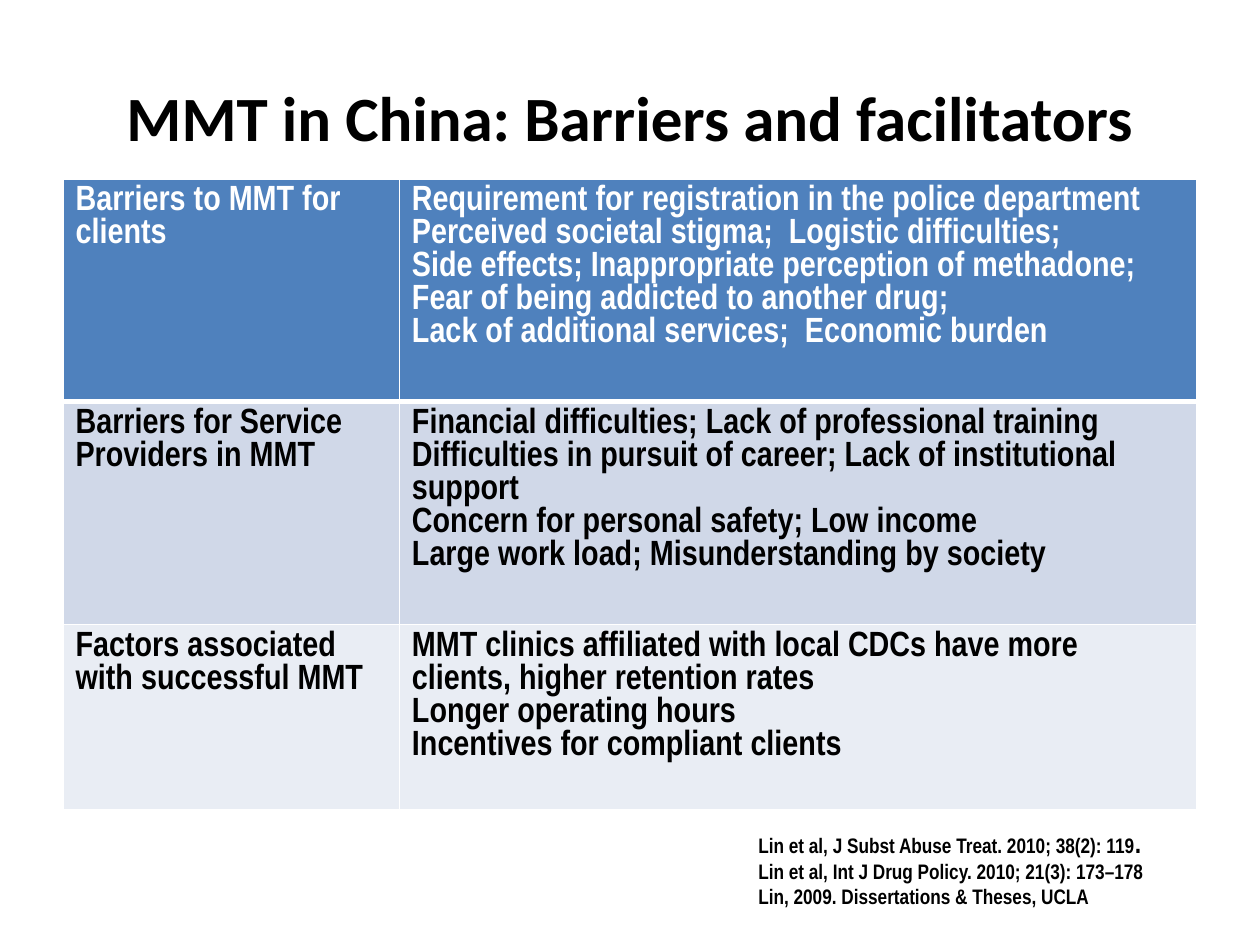
import pptx
import pptx.util
import pptx.dml.color
import pptx.enum.text
import pptx.oxml
import pptx.oxml.ns

Inches, Pt = pptx.util.Inches, pptx.util.Pt
ANCHOR, ALIGN = pptx.enum.text.MSO_ANCHOR, pptx.enum.text.PP_ALIGN

COLORS = {
    "text": "000000",
    "white": "FFFFFF",
    "header": "4F81BD",
    "band_dark": "D0D8E8",
    "band_light": "E9EDF4",
}

COLUMN_WIDTHS = [2.67, 6.33]
# Each row: height, fill, text colour, label, details
ROWS = [
    (1.72, "header", "white", "Barriers to MMT for clients", [
        "Requirement for registration in the police department",
        "Perceived societal stigma;  Logistic difficulties;",
        "Side effects; Inappropriate perception of methadone;",
        "Fear of being addicted to another drug;",
        "Lack of additional services;  Economic burden",
    ]),
    (1.72, "band_dark", "text", "Barriers for Service Providers in MMT", [
        "Financial difficulties; Lack of professional training",
        "Difficulties in pursuit of career; Lack of institutional support",
        "Concern for personal safety; Low income",
        "Large work load; Misunderstanding by society",
    ]),
    (1.47, "band_light", "text", "Factors associated with successful MMT", [
        "MMT clinics affiliated with local CDCs have more clients, higher retention rates",
        "Longer operating hours",
        "Incentives for compliant clients",
    ]),
]
REFERENCES = [
    [("Lin et al, J Subst Abuse Treat. 2010; 38(2): 119", 12), (".", 16)],
    "Lin et al, Int J Drug Policy. 2010; 21(3): 173–178",
    "Lin, 2009. Dissertations & Theses, UCLA",
]


def write(tf, lines, size, font="Arial Narrow", color="text", align=ALIGN.LEFT):
    """Write one paragraph per line; a line is a string or a list of (text, size) runs."""
    tf.word_wrap = True
    for i, line in enumerate(lines):
        p = tf.paragraphs[0] if i == 0 else tf.add_paragraph()
        p.alignment = align
        for text, run_size in [(line, size)] if isinstance(line, str) else line:
            r = p.add_run()
            r.text = text
            r.font.name = font
            r.font.size = Pt(run_size)
            r.font.bold = True
            r.font.color.rgb = pptx.dml.color.RGBColor.from_string(COLORS[color])


def set_borders(cell, widths):
    """Draw white cell borders; widths maps each side (L, R, T, B) to points."""
    tc_pr = cell._tc.get_or_add_tcPr()
    for side, width in widths.items():
        tc_pr.append(pptx.oxml.parse_xml(
            f'<a:ln{side} {pptx.oxml.ns.nsdecls("a")} w="{Pt(width)}"><a:solidFill>'
            f'<a:srgbClr val="{COLORS["white"]}"/></a:solidFill></a:ln{side}>'))


class Deck:
    """Holds the table style and the current slide."""

    def __init__(self, prs):
        self.slide = prs.slides.add_slide(prs.slide_layouts[6])
        self.table_style = {"size": 20, "font": "Arial Narrow"}

    def text(self, lines, left, top, width, height, anchor=ANCHOR.TOP, **style):
        sp = self.slide.shapes.add_textbox(
            Inches(left), Inches(top), Inches(width), Inches(height))
        sp.text_frame.vertical_anchor = anchor
        write(sp.text_frame, lines, **style)

    def table(self, rows, column_widths, left, top):
        height = sum(row[0] for row in rows)
        table = self.slide.shapes.add_table(
            len(rows), len(column_widths), Inches(left), Inches(top),
            Inches(sum(column_widths)), Inches(height)).table
        for column, width in zip(table.columns, column_widths):
            column.width = Inches(width)
        for i, (row_height, fill, color, label, details) in enumerate(rows):
            table.rows[i].height = Inches(row_height)
            borders = {"L": 1, "R": 1, "T": 3 if i == 1 else 1, "B": 3 if i == 0 else 1}
            for cell, lines in zip(table.rows[i].cells, ([label], details)):
                set_borders(cell, borders)
                cell.fill.solid()
                cell.fill.fore_color.rgb = pptx.dml.color.RGBColor.from_string(COLORS[fill])
                write(cell.text_frame, lines, color=color, **self.table_style)


def main():
    prs = pptx.Presentation()
    prs.slide_width, prs.slide_height = Inches(10), Inches(7.5)
    deck = Deck(prs)
    deck.text(["MMT in China: Barriers and facilitators"], 0.5, 0.3, 9, 1.25,
              anchor=ANCHOR.MIDDLE, size=36, font="Calibri", align=ALIGN.CENTER)
    deck.table(ROWS, COLUMN_WIDTHS, 0.5, 1.42)
    deck.text(REFERENCES, 5.92, 6.5, 3.5, 0.77, size=12)
    prs.save("out.pptx")


if __name__ == "__main__":
    main()
